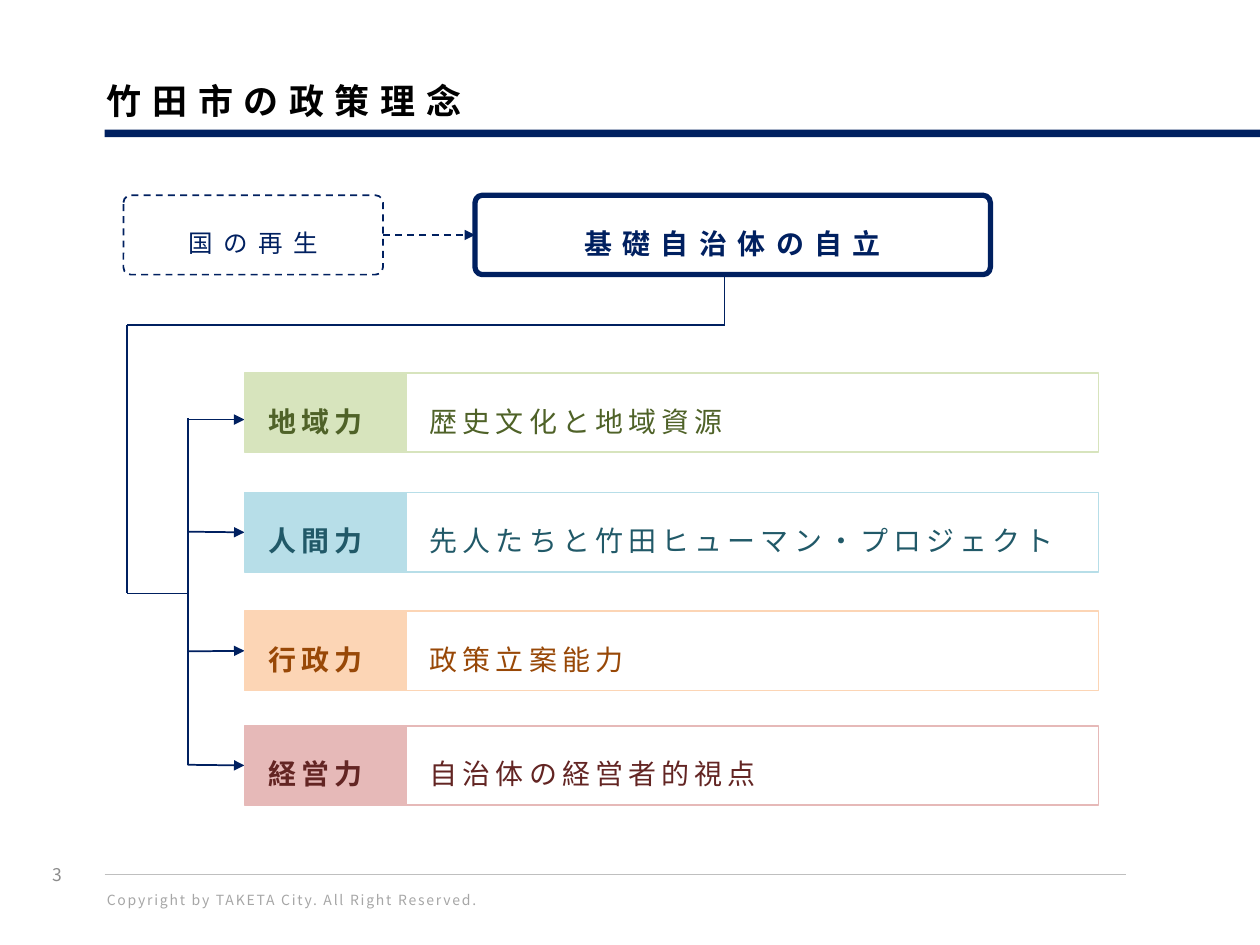
from lxml import etree
from pptx import Presentation
from pptx.dml.color import RGBColor
from pptx.enum import dml, shapes, text
from pptx.oxml.ns import qn
from pptx.util import Inches, Pt

FONT = "Noto Sans CJK JP"
NAVY = "002060"
rgb = RGBColor.from_string


def write(shape, words, size, color, bold=False, spacing=0, line_spacing=None,
          align=text.PP_ALIGN.LEFT, anchor=text.MSO_ANCHOR.MIDDLE, inset=0.1):
    """Put one styled paragraph in a shape; spacing is between letters, in points."""
    frame = shape.text_frame
    frame.text = words
    frame.word_wrap = True
    frame.vertical_anchor = anchor
    frame.margin_left = Inches(inset)
    paragraph = frame.paragraphs[0]
    paragraph.alignment = align
    paragraph.line_spacing = line_spacing
    font = paragraph.runs[0].font
    font.size, font.bold, font.name = Pt(size), bold, FONT
    font.color.rgb = rgb(color)
    properties = paragraph.runs[0]._r.get_or_add_rPr()
    properties.set("spc", str(spacing * 100))
    etree.SubElement(properties, qn("a:ea")).set("typeface", FONT)


def connect(x1, y1, x2, y2, color=NAVY, arrow=False, dashed=False):
    link = slide.shapes.add_connector(
        shapes.MSO_CONNECTOR.STRAIGHT, Inches(x1), Inches(y1), Inches(x2), Inches(y2))
    link.line.color.rgb = rgb(color)
    link.line.width = Pt(1)
    if dashed:
        link.line.dash_style = dml.MSO_LINE.DASH
    if arrow:
        etree.SubElement(link.line._get_or_add_ln(), qn("a:tailEnd")).set("type", "triangle")
    etree.SubElement(link._element.spPr, qn("a:effectLst"))
    return link


prs = Presentation()
prs.slide_width, prs.slide_height = Inches(10), Inches(7.5)
slide = prs.slides.add_slide(prs.slide_layouts[6])

# Footer
connect(0.83, 6.94, 8.94, 6.94, "BFBFBF")
copyright_line = slide.shapes.add_textbox(Inches(0.75), Inches(6.96), Inches(5.36), Inches(0.39))
write(copyright_line, "Copyright by TAKETA City. All Right Reserved.", 8, "A6A6A6",
      spacing=1, line_spacing=1.5, anchor=text.MSO_ANCHOR.TOP)
page_number = slide.shapes.add_textbox(Inches(0.32), Inches(6.74), Inches(0.5), Inches(0.4))
write(page_number, "3", 10, "8C8C8C")

# Title
title_bar = slide.shapes.add_shape(
    shapes.MSO_SHAPE.RECTANGLE, Inches(0.83), Inches(1.03), Inches(9.17), Inches(0.06))
title_bar.shadow.inherit = False
title_bar.fill.solid()
title_bar.fill.fore_color.rgb = rgb(NAVY)
title_bar.line.fill.background()
title = slide.shapes.add_textbox(Inches(0.75), Inches(0.52), Inches(5.59), Inches(0.55))
write(title, "竹田市の政策理念", 20, "000000", bold=True, spacing=6)

# National renewal leads to municipal independence
BOX_HEIGHT = 0.63
goals = []
for words, left, width, size, weight, bold in [
    ("国の再生", 0.98, 2.06, 14, 1, False),
    ("基礎自治体の自立", 3.77, 4.09, 16, 3, True),
]:
    goal = slide.shapes.add_shape(
        shapes.MSO_SHAPE.ROUNDED_RECTANGLE,
        Inches(left), Inches(1.55), Inches(width), Inches(BOX_HEIGHT))
    goal.adjustments[0] = 0.093
    goal.shadow.inherit = False
    goal.fill.background()
    goal.line.color.rgb = rgb(NAVY)
    goal.line.width = Pt(weight)
    write(goal, words, size, NAVY, bold, spacing=6, line_spacing=1.5,
          align=text.PP_ALIGN.CENTER)
    goals.append(goal)
renewal, independence = goals
renewal.line.dash_style = dml.MSO_LINE.DASH
goal_arrow = connect(3.05, 1.86, 3.77, 1.86, arrow=True, dashed=True)
goal_arrow.begin_connect(renewal, 3)
goal_arrow.end_connect(independence, 1)

# Path from independence down to the four powers
TRUNK_X, BRANCH_X, POWER_X, DETAIL_X = 1.01, 1.49, 1.94, 3.22
connect(5.75, 2.18, 5.75, 2.58)
connect(5.75, 2.58, TRUNK_X, 2.58)
connect(TRUNK_X, 2.58, TRUNK_X, 4.71)
connect(TRUNK_X, 4.71, BRANCH_X, 4.71)
connect(BRANCH_X, 3.32, BRANCH_X, 6.07)

powers = [
    ("地域力", "歴史文化と地域資源", 2.96, 3.33, "D7E4BD", "4F6228"),
    ("人間力", "先人たちと竹田ヒューマン・プロジェクト", 3.91, 4.22, "B7DEE8", "215968"),
    ("行政力", "政策立案能力", 4.85, 5.17, "FCD5B5", "984807"),
    ("経営力", "自治体の経営者的視点", 5.76, 6.07, "E6B9B8", "632523"),
]
for power, detail, top, arrow_y, tint, ink in powers:
    arrow = connect(BRANCH_X, arrow_y, POWER_X, arrow_y, arrow=True)
    for words, left, width, is_power in [
        (power, POWER_X, 1.28, True),
        (detail, DETAIL_X, 5.5, False),
    ]:
        cell = slide.shapes.add_shape(
            shapes.MSO_SHAPE.RECTANGLE,
            Inches(left), Inches(top), Inches(width), Inches(BOX_HEIGHT))
        cell.shadow.inherit = False
        cell.line.color.rgb = rgb(tint)
        cell.line.width = Pt(1)
        if is_power:
            cell.fill.solid()
            cell.fill.fore_color.rgb = rgb(tint)
        else:
            cell.fill.background()
        write(cell, words, 16, ink, bold=is_power, spacing=3, line_spacing=1.5, inset=0.19)
        # The first arrow meets its box a little below the middle
        if is_power and power != "地域力":
            arrow.end_connect(cell, 1)

prs.save("out.pptx")
